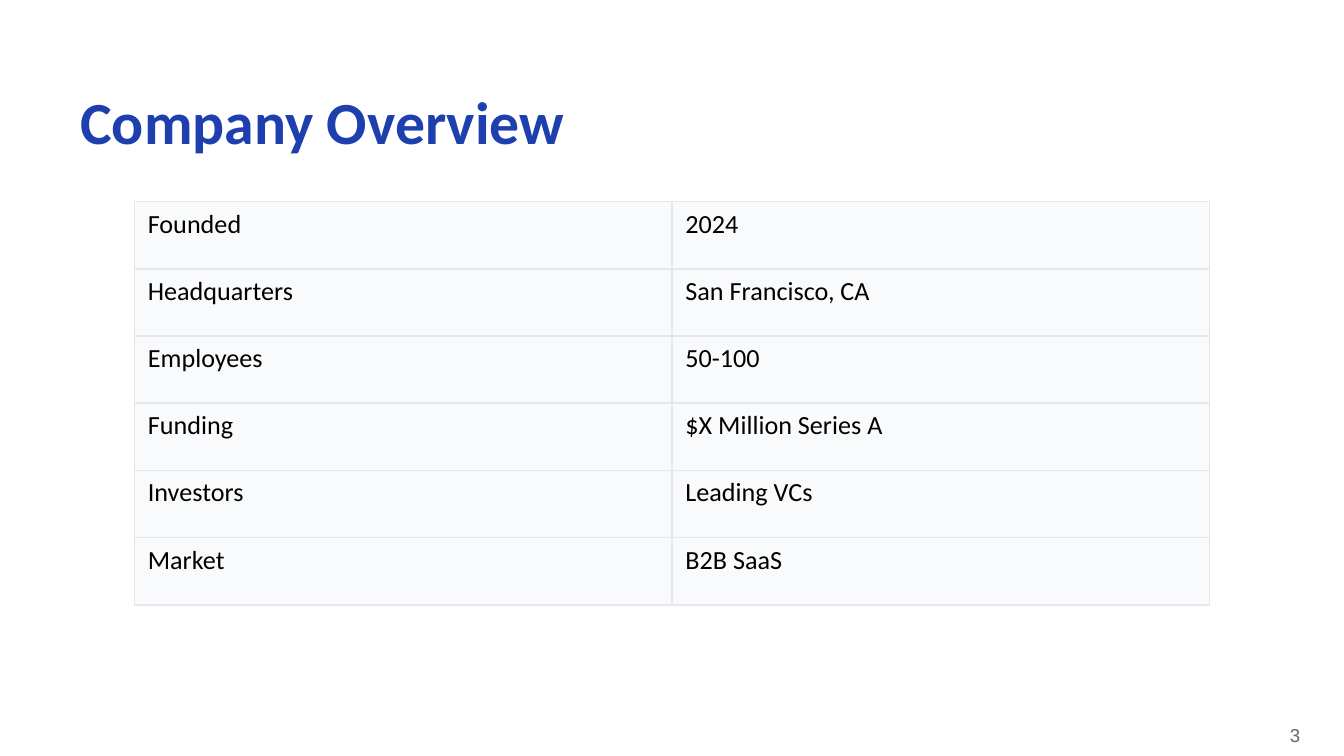
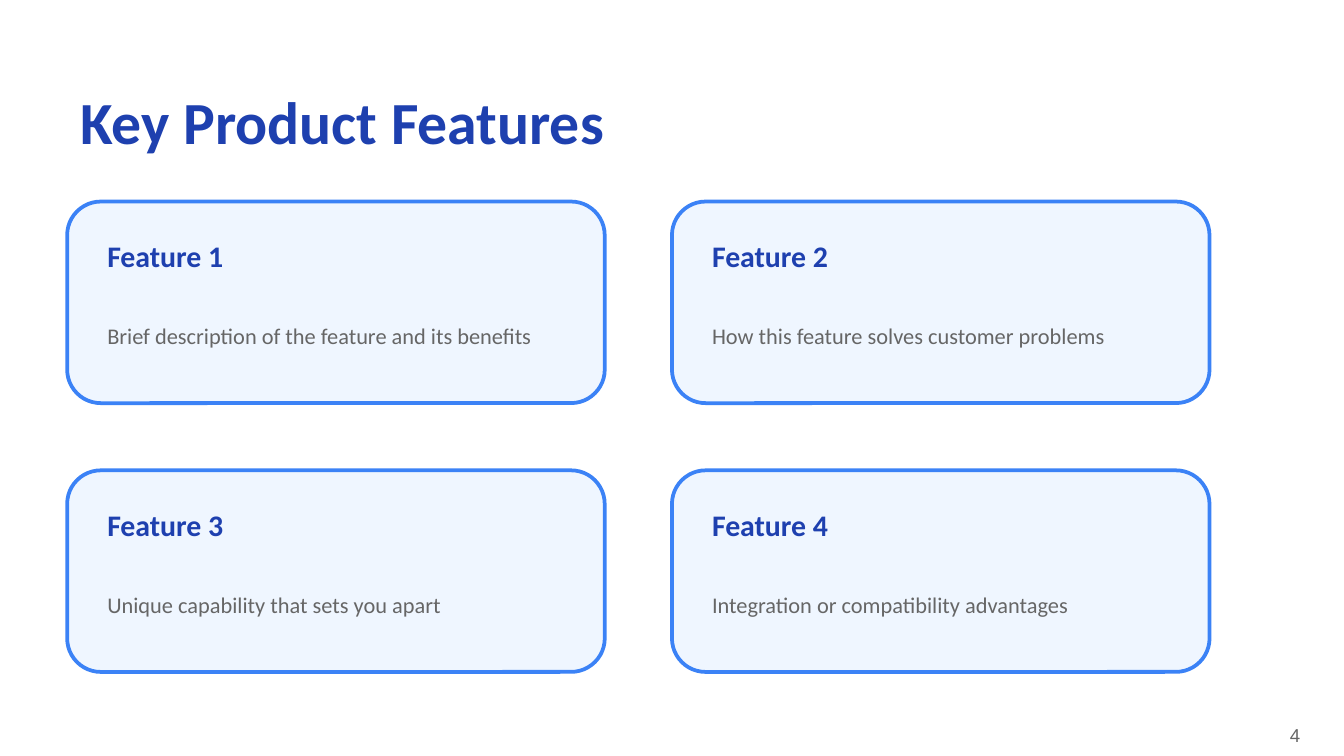
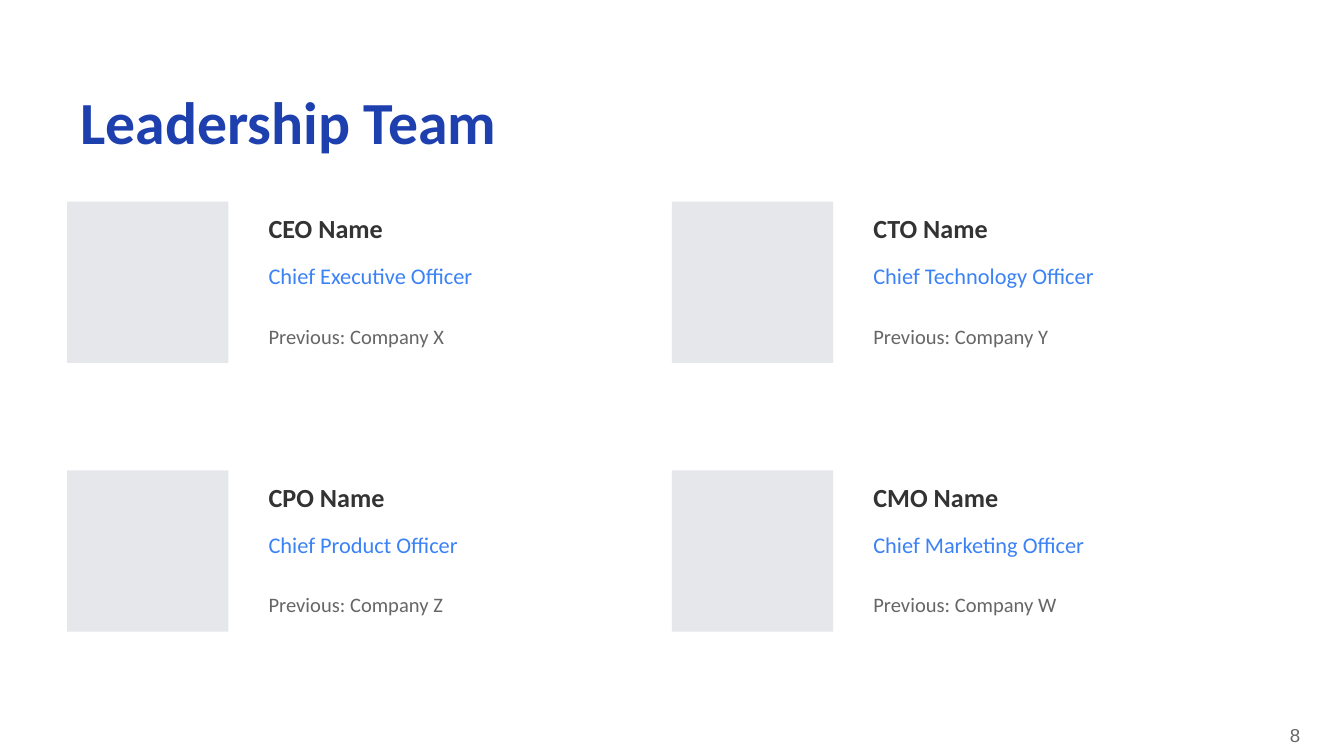
from itertools import product

from lxml.etree import SubElement
from pptx import Presentation
from pptx.dml.color import RGBColor
from pptx.enum.shapes import MSO_SHAPE as Shape
from pptx.enum.text import MSO_ANCHOR as Anchor
from pptx.oxml.ns import qn
from pptx.util import Inches, Pt

# Colours
WHITE = RGBColor(0xFF, 0xFF, 0xFF)
BLACK = RGBColor(0, 0, 0)
NAVY = RGBColor(0x1E, 0x40, 0xAF)
BLUE = RGBColor(0x3B, 0x82, 0xF6)
PALE = RGBColor(0xEF, 0xF6, 0xFF)
INK = RGBColor(0x33, 0x33, 0x33)
GREY = RGBColor(0x66, 0x66, 0x66)
RULE = RGBColor(0xE5, 0xE7, 0xEB)
CELL = RGBColor(0xF9, 0xFA, 0xFB)

# Left and top of the four blocks, in grid units, row by row
SPOTS = [(x, y) for y, x in product((15, 35), (5, 50))]


class Deck:
    """Style and current slide, on a square grid of 100 columns."""

    font = "Calibri"

    def __init__(self):
        self.file = Presentation()
        self.file.slide_width = Inches(10)
        self.file.slide_height = Inches(5.625)
        self.unit = self.file.slide_width / 100

    def grid(self, *cells):
        return [round(cell * self.unit) for cell in cells]

    def style(self, para, size, color, bold=False, font=None):
        face = para.font
        face.name, face.size, face.bold = font or self.font, Pt(size), bold
        face.color.rgb = color

    def page(self, title, number):
        self.slide = self.file.slides.add_slide(self.file.slide_layouts[6])
        fill = self.slide.background.fill
        fill.solid()
        fill.fore_color.rgb = WHITE
        self.text(title, (5, 5, 90, 8), 32, NAVY, bold=True)
        self.text(str(number), (95, 53.4, 8.7, 3.3), 10, GREY,
                  font="Arial", anchor=Anchor.TOP)

    def text(self, words, box, size, color, bold=False, font=None,
             anchor=Anchor.MIDDLE):
        frame = self.slide.shapes.add_textbox(*self.grid(*box)).text_frame
        frame.word_wrap = True
        frame.vertical_anchor = anchor
        para = frame.paragraphs[0]
        para.text = words
        self.style(para, size, color, bold, font)

    def shape(self, kind, box, color, line=None):
        shape = self.slide.shapes.add_shape(kind, *self.grid(*box))
        shape.shadow.inherit = False
        shape.fill.solid()
        shape.fill.fore_color.rgb = color
        if line is None:
            shape.line.fill.background()
        else:
            shape.line.color.rgb = line
            shape.line.width = Pt(2)

    def table(self, rows, box):
        table = self.slide.shapes.add_table(
            len(rows), len(rows[0]), *self.grid(*box)).table
        table.first_row = table.horz_banding = False
        for r, row in enumerate(rows):
            for c, words in enumerate(row):
                cell = table.cell(r, c)
                cell.text = words
                self.style(cell.text_frame.paragraphs[0], 14, BLACK)
                self.border(cell)
                cell.fill.solid()
                cell.fill.fore_color.rgb = CELL

    def border(self, cell):
        props = cell._tc.get_or_add_tcPr()
        for side in "LRTB":
            line = SubElement(props, qn(f"a:ln{side}"), w=str(Pt(1)))
            fill = SubElement(line, qn("a:solidFill"))
            SubElement(fill, qn("a:srgbClr"), val=str(RULE))

    def card(self, x, y, name, note):
        self.shape(Shape.ROUNDED_RECTANGLE, (x, y, 40, 15), PALE, BLUE)
        self.text(name, (x + 2, y + 2, 36, 4), 16, NAVY, bold=True)
        self.text(note, (x + 2, y + 6, 36, 8), 12, GREY)

    def leader(self, x, y, name, role, past):
        self.shape(Shape.RECTANGLE, (x, y, 12, 12), RULE)
        left = x + 14
        self.text(name, (left, y, 25, 4), 14, INK, bold=True)
        self.text(role, (left, y + 4, 25, 3), 12, BLUE)
        self.text(past, (left, y + 8, 25, 4), 11, GREY)


def main():
    deck = Deck()

    # Company facts
    deck.page("Company Overview", 3)
    deck.table([
        ("Founded", "2024"),
        ("Headquarters", "San Francisco, CA"),
        ("Employees", "50-100"),
        ("Funding", "$X Million Series A"),
        ("Investors", "Leading VCs"),
        ("Market", "B2B SaaS"),
    ], (10, 15, 80, 30))

    # Feature cards
    deck.page("Key Product Features", 4)
    notes = [
        "Brief description of the feature and its benefits",
        "How this feature solves customer problems",
        "Unique capability that sets you apart",
        "Integration or compatibility advantages",
    ]
    for i, (spot, note) in enumerate(zip(SPOTS, notes), 1):
        deck.card(*spot, f"Feature {i}", note)

    # Leaders
    deck.page("Leadership Team", 8)
    team = [("CEO", "Executive", "X"), ("CTO", "Technology", "Y"),
            ("CPO", "Product", "Z"), ("CMO", "Marketing", "W")]
    for spot, (short, field, firm) in zip(SPOTS, team):
        deck.leader(*spot, f"{short} Name", f"Chief {field} Officer",
                    f"Previous: Company {firm}")

    deck.file.save("out.pptx")


if __name__ == "__main__":
    main()
